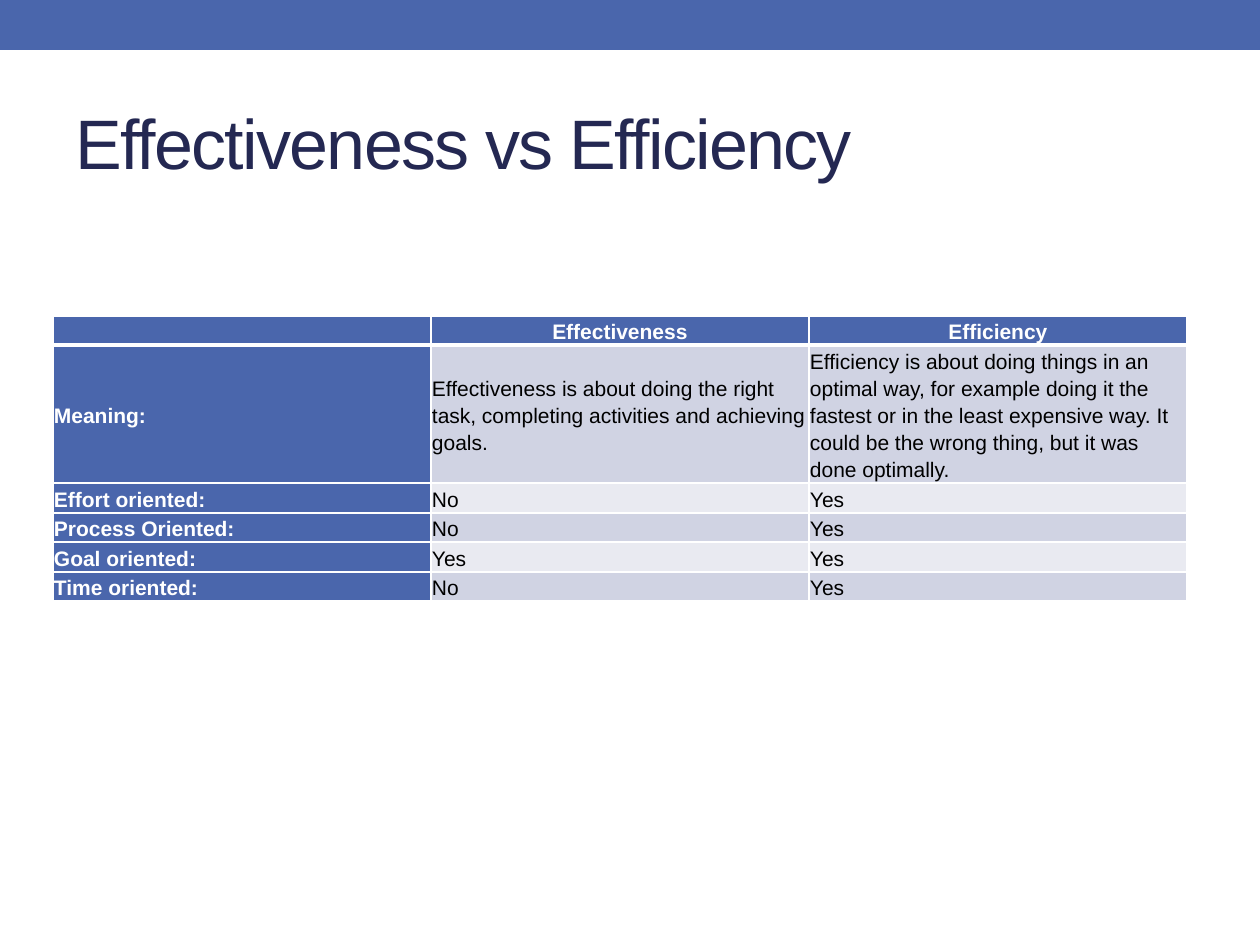
from dataclasses import dataclass

from lxml import etree
from pptx import Presentation
from pptx.dml.color import RGBColor
from pptx.enum.shapes import MSO_SHAPE
from pptx.enum.text import MSO_ANCHOR, PP_ALIGN
from pptx.oxml.ns import qn
from pptx.slide import Slide
from pptx.table import _Cell
from pptx.text.text import Font
from pptx.util import Emu, Pt

RECT = MSO_SHAPE.RECTANGLE
MIDDLE = MSO_ANCHOR.MIDDLE
LEFT, CENTER = PP_ALIGN.LEFT, PP_ALIGN.CENTER

FACE = "Arial"
SIZE = 12
COLORS = {
    "blue": "4A66AC",
    "navy": "242852",
    "dark": "D0D3E3",
    "light": "E9EAF1",
    "white": "FFFFFF",
    "black": "000000",
}


@dataclass
class Row:
    height: int
    texts: tuple[str, str, str]


ROWS = [
    Row(29, ("", "Effectiveness", "Efficiency")),
    Row(138, (
        "Meaning:",
        "Effectiveness is about doing the right task, completing activities "
        "and achieving goals.",
        "Efficiency is about doing things in an optimal way, for example doing "
        "it the fastest or in the least expensive way. It could be the wrong "
        "thing, but it was done optimally.",
    )),
    Row(30, ("Effort oriented:", "No", "Yes")),
    Row(29, ("Process Oriented:", "No", "Yes")),
    Row(30, ("Goal oriented:", "Yes", "Yes")),
    Row(29, ("Time oriented:", "No", "Yes")),
]


def px(count: int) -> Emu:
    return Emu(round(count * 914400 / 126))


def color(name: str) -> RGBColor:
    return RGBColor.from_string(COLORS[name])


def style(font: Font, size: int, name: str, bold: bool = False) -> None:
    font.name = FACE
    font.size = Pt(size)
    font.bold = bold
    font.color.rgb = color(name)


def draw_band(slide: Slide) -> None:
    band = slide.shapes.add_shape(RECT, 0, 0, px(1260), px(50))
    band.shadow.inherit = False
    band.fill.solid()
    band.fill.fore_color.rgb = color("blue")
    band.line.fill.background()


def draw_title(slide: Slide, text: str) -> None:
    title = slide.shapes.title
    title.left, title.top = px(63), px(73)
    title.width, title.height = px(1134), px(136)
    frame = title.text_frame
    frame.text = text
    frame.vertical_anchor = MIDDLE
    para = frame.paragraphs[0]
    para.alignment = LEFT
    run = para.runs[0]
    style(run.font, 40, "navy")
    run.font._element.set("spc", "-100")


def add_edge(cell: _Cell, side: str, width: int) -> None:
    props = cell._tc.get_or_add_tcPr()
    line = etree.SubElement(props, qn(f"a:ln{side}"), w=str(Pt(width)))
    fill = etree.SubElement(line, qn("a:solidFill"))
    etree.SubElement(fill, qn("a:srgbClr"), val=COLORS["white"])


def draw_cell(cell: _Cell, text: str, row: int, col: int) -> None:
    head = row == 0 or col == 0
    edges = {"L": 1, "R": 1, "T": 3 if row == 1 else 1, "B": 3 if row == 0 else 1}
    for side, width in edges.items():
        add_edge(cell, side, width)
    cell.fill.solid()
    shade = "blue" if head else "dark" if row % 2 else "light"
    cell.fill.fore_color.rgb = color(shade)
    cell.vertical_anchor = MIDDLE
    cell.margin_left = cell.margin_right = px(1)
    cell.margin_top = cell.margin_bottom = px(1)
    cell.text_frame.text = text
    para = cell.text_frame.paragraphs[0]
    para.alignment = CENTER if row == 0 else LEFT
    para.line_spacing = 1.15
    for run in para.runs:
        style(run.font, SIZE, "white" if head else "black", head)
    if not text:
        etree.SubElement(para._p, qn("a:endParaRPr"), sz=str(SIZE * 100))


def draw_table(slide: Slide, rows: list[Row]) -> None:
    total = sum(row.height for row in rows)
    shape = slide.shapes.add_table(
        len(rows), 3, px(53), px(316), px(3 * 378), px(total)
    )
    table = shape.table
    for col in table.columns:
        col.width = px(378)
    for i, row in enumerate(rows):
        table.rows[i].height = px(row.height)
        for j, text in enumerate(row.texts):
            draw_cell(table.cell(i, j), text, i, j)


def main() -> None:
    deck = Presentation()
    deck.slide_width, deck.slide_height = px(1260), px(945)
    slide = deck.slides.add_slide(deck.slide_layouts[5])
    draw_band(slide)
    draw_title(slide, "Effectiveness vs Efficiency")
    draw_table(slide, ROWS)
    deck.save("out.pptx")


if __name__ == "__main__":
    main()
